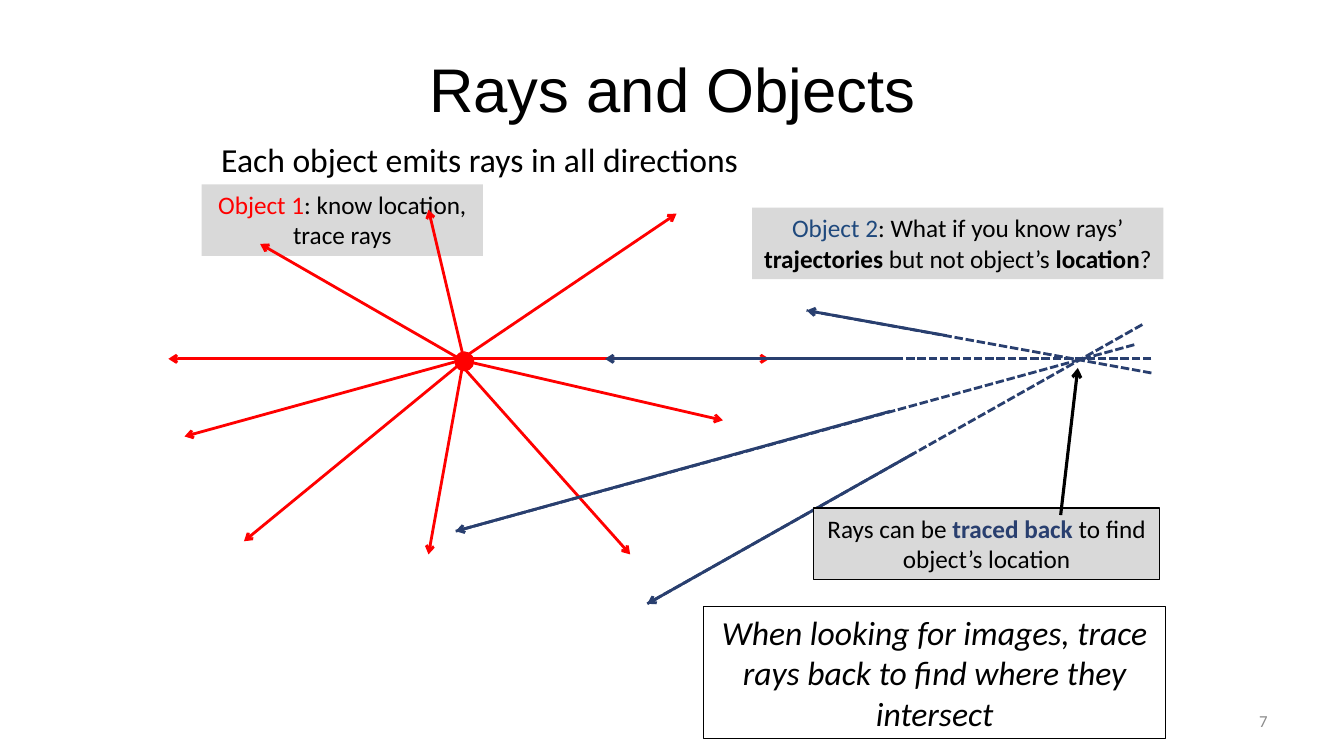
from lxml import etree
from pptx import Presentation
from pptx.dml.color import RGBColor
from pptx.enum.dml import MSO_LINE
from pptx.enum.shapes import MSO_CONNECTOR, MSO_SHAPE
from pptx.enum.text import MSO_ANCHOR, PP_ALIGN
from pptx.oxml.ns import qn
from pptx.util import Inches, Pt

STRAIGHT = MSO_CONNECTOR.STRAIGHT
RECTANGLE, OVAL = MSO_SHAPE.RECTANGLE, MSO_SHAPE.OVAL
SYS_DASH = MSO_LINE.SQUARE_DOT
CENTER, RIGHT = PP_ALIGN.CENTER, PP_ALIGN.RIGHT
TOP, MIDDLE = MSO_ANCHOR.TOP, MSO_ANCHOR.MIDDLE
RED, NAVY, BLUE = "FF0000", "293F6F", "1F497D"
BLACK, GRAY, LIGHT = "000000", "8C8C8C", "D9D9D9"
hex_color = RGBColor.from_string


def write_text(shape, runs, size, font="Calibri", align=CENTER, anchor=TOP, italic=False):
    """Fill a shape with one paragraph of (text, colour, bold) runs."""
    frame = shape.text_frame
    frame.word_wrap = True
    frame.vertical_anchor = anchor
    paragraph = frame.paragraphs[0]
    paragraph.alignment = align
    for text, color, bold in runs:
        run = paragraph.add_run()
        run.text = text
        run.font.name = font
        run.font.size = Pt(size)
        run.font.bold = bold
        run.font.italic = italic
        run.font.color.rgb = hex_color(color)


def draw_ray(start, end, color, width=2, dashed=False):
    """Draw a dashed extension, or a solid ray with an arrowhead at its end."""
    ray = slide.shapes.add_connector(STRAIGHT, *map(Inches, start + end))
    ray.line.color.rgb = hex_color(color)
    ray.line.width = Pt(width)
    properties = ray._element.spPr
    if dashed:
        ray.line.dash_style = SYS_DASH
    else:
        etree.SubElement(properties.find(qn("a:ln")), qn("a:tailEnd"), type="arrow")
    etree.SubElement(properties, qn("a:effectLst"))


prs = Presentation()
prs.slide_width, prs.slide_height = Inches(13.33), Inches(7.5)
slide = prs.slides.add_slide(prs.slide_layouts[5])

title = slide.shapes.title
title.left, title.top, title.width, title.height = map(Inches, (2.17, 0.25, 9, 1.25))
write_text(title, [("Rays and Objects", BLACK, False)], 44, font="Arial", anchor=MIDDLE)

# Object 2: far end of the extension, start of the solid ray, arrow tip
object_2_rays = [
    ((11.42, 3.56), (8.92, 3.56), (6, 3.56)),
    ((11.33, 3.22), (9.06, 4.5), (6.42, 5.99)),
    ((11.25, 3.42), (8.83, 4.08), (4.52, 5.27)),
    ((11.42, 3.7), (9.39, 3.33), (8, 3.08)),
]
for far_end, solid_start, tip in object_2_rays:
    draw_ray(far_end, tip, NAVY, dashed=True)

# left, top, width, height, fill, outline width, size, italic, runs
boxes = [
    (2, 1.83, 2.79, 0.71, LIGHT, None, 18, False,
     [("Object 1", RED, False), (": know location, trace rays", BLACK, False)]),
    (7.46, 2.06, 4.08, 0.71, LIGHT, None, 18, False,
     [("Object 2", BLUE, False), (": What if you know rays’ ", BLACK, False),
      ("trajectories", BLACK, True), (" but not object’s ", BLACK, False),
      ("location", BLACK, True), ("?", BLACK, False)]),
    (6.98, 6.02, 4.58, 1.31, None, 0.75, 24, True,
     [("When looking for images, trace rays back to find where they intersect",
       BLACK, False)]),
]
traced_back_box = (
    8.07, 5.04, 3.43, 0.71, LIGHT, 1, 18, False,
    [("Rays can be ", BLACK, False), ("traced back ", NAVY, True),
     ("to find object’s location", BLACK, False)])

# Object 1: start and arrow tip
object_1_rays = [
    ((4.52, 3.56), (7.63, 3.56)),
    ((4.52, 3.56), (7.17, 4.17)),
    ((4.52, 3.56), (6.25, 5.5)),
    ((4.6, 3.56), (4.25, 5.5)),
    ((4.6, 3.56), (4.25, 2.08)),
    ((4.64, 3.52), (6.71, 2.12)),
    ((4.57, 3.56), (1.67, 3.56)),
    ((4.6, 3.58), (2.42, 5.37)),
    ((4.55, 3.58), (1.83, 4.33)),
    ((4.56, 3.56), (2.58, 2.42)),
]

# The last box covers the rays, so it is drawn after them
for group in (boxes, [traced_back_box]):
    for left, top, width, height, fill, outline, size, italic, runs in group:
        box = slide.shapes.add_shape(RECTANGLE, *map(Inches, (left, top, width, height)))
        box.shadow.inherit = False
        if fill:
            box.fill.solid()
            box.fill.fore_color.rgb = hex_color(fill)
        else:
            box.fill.background()
        if outline:
            box.line.color.rgb = hex_color(BLACK)
            box.line.width = Pt(outline)
        else:
            box.line.fill.background()
        write_text(box, runs, size, italic=italic)
    if group is boxes:
        for start, tip in object_1_rays:
            draw_ray(start, tip, RED)
        for far_end, solid_start, tip in object_2_rays:
            draw_ray(solid_start, tip, NAVY)

object_1 = slide.shapes.add_shape(OVAL, *map(Inches, (4.52, 3.5, 0.17, 0.17)))
object_1.shadow.inherit = False
object_1.fill.solid()
object_1.fill.fore_color.rgb = hex_color(RED)
object_1.line.color.rgb = hex_color(RED)
object_1.line.width = Pt(2)

draw_ray((10.52, 5.11), (10.69, 3.65), BLACK, width=2.25)

statement = slide.shapes.add_textbox(*map(Inches, (1.17, 1.33, 7.25, 0.51)))
write_text(statement, [("Each object emits rays in all directions ", BLACK, False)], 24)

page_number = slide.shapes.add_textbox(*map(Inches, (9.56, 6.95, 3.11, 0.4)))
write_text(page_number, [("7", GRAY, False)], 12, align=RIGHT, anchor=MIDDLE)

prs.save("out.pptx")
